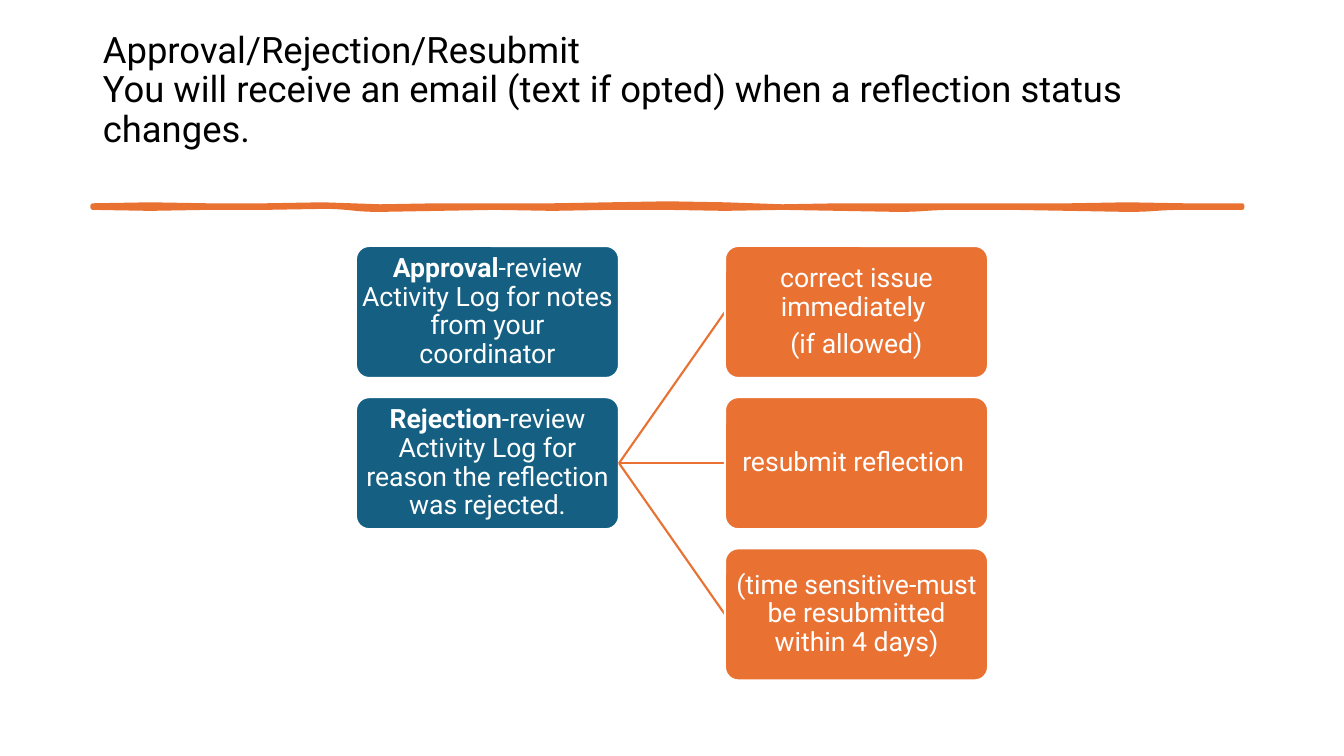
from lxml import etree
from pptx import Presentation
from pptx.dml.color import RGBColor
from pptx.enum.shapes import MSO_CONNECTOR, MSO_SHAPE
from pptx.enum.text import MSO_ANCHOR, MSO_AUTO_SIZE, PP_ALIGN
from pptx.oxml.ns import qn
from pptx.util import Inches, Pt

STRAIGHT = MSO_CONNECTOR.STRAIGHT
ROUNDED = MSO_SHAPE.ROUNDED_RECTANGLE
MIDDLE = MSO_ANCHOR.MIDDLE
LEFT, CENTER = PP_ALIGN.LEFT, PP_ALIGN.CENTER
NO_AUTOFIT = MSO_AUTO_SIZE.NONE
LEFT_SIDE, RIGHT_SIDE = 1, 3

FONT = "Roboto"
BLUE, ORANGE, WHITE, BLACK = "156082", "E97132", "FFFFFF", "000000"

HEADING = ("Approval/Rejection/Resubmit\v"
           "You will receive an email (text if opted) when a reflection status changes.")
OUTCOMES = [
    ("Approval", "-review Activity Log for notes from your coordinator"),
    ("Rejection", "-review Activity Log for reason the reflection was rejected."),
]
REJECTION_STEPS = [
    ["correct issue immediately ", "(if allowed)"],
    ["resubmit reflection "],
    ["(time sensitive-must be resubmitted within 4 days)"],
]

SLIDE_W, SLIDE_H = 13.33, 7.5
CARD_W, CARD_H = 2.61, 1.31
COLUMNS = (3.53, 7.19)
FIRST_ROW, ROW_PITCH = 2.44, 1.5

RULE_LEFT, RULE_WIDTH, RULE_TOP, RULE_THICK = 0.92, 11.4, 2.04, 0.02
UPPER_WAVE = [0, -1, 0, 0, -1, 1, 0, 0, 0, -1, -2, -1, 1, 0, 0, 0, 0, 0, -1, 0, 0]
LOWER_WAVE = [0, 1, 0, 0, -1, 2, 1, 0, 1, 0, 0, 1, 0, 1, 2, 0, 0, 1, 2, 0, 0]


def color(hex_code):
    return RGBColor.from_string(hex_code)


def style_font(font, size, hex_code):
    font.name = FONT
    font.size = Pt(size)
    font.color.rgb = color(hex_code)


def paint(shape, fill, outline, width):
    shape.shadow.inherit = False
    shape.fill.solid()
    shape.fill.fore_color.rgb = color(fill)
    shape.line.color.rgb = color(outline)
    shape.line.width = Pt(width)


def add_heading(slide):
    title = slide.shapes.title
    title.left, title.top = Inches(0.92), Inches(0.4)
    title.width, title.height = Inches(11.5), Inches(1.45)
    frame = title.text_frame
    frame.text = HEADING
    frame.word_wrap = True
    frame.auto_size = NO_AUTOFIT
    frame.vertical_anchor = MIDDLE
    frame.margin_bottom = Inches(0.49)
    paragraph = frame.paragraphs[0]
    paragraph.alignment = LEFT
    paragraph.line_spacing = 0.9
    for run in paragraph.runs:
        style_font(run.font, 26, BLACK)


def edge(offsets, level):
    step = RULE_WIDTH / (len(offsets) - 1)
    return [(Inches(RULE_LEFT + step * knot), Inches(level + offset / 100))
            for knot, offset in enumerate(offsets)]


def bend_segments(outline):
    start = outline.find(".//" + qn("a:moveTo"))[0]
    x, y = int(start.get("x")), int(start.get("y"))
    for segment in list(outline.iter(qn("a:lnTo"))):
        end_x, end_y = int(segment[0].get("x")), int(segment[0].get("y"))
        middle = (x + end_x) // 2
        curve = etree.Element(qn("a:cubicBezTo"))
        for point_x, point_y in ((middle, y), (middle, end_y), (end_x, end_y)):
            etree.SubElement(curve, qn("a:pt"), x=str(point_x), y=str(point_y))
        segment.getparent().replace(segment, curve)
        x, y = end_x, end_y


def add_rule(slide):
    upper = edge(UPPER_WAVE, RULE_TOP)
    lower = edge(LOWER_WAVE, RULE_TOP + RULE_THICK)
    builder = slide.shapes.build_freeform(*upper[0])
    builder.add_line_segments(upper[1:] + lower[::-1], close=True)
    rule = builder.convert_to_shape()
    bend_segments(rule._element)
    paint(rule, ORANGE, ORANGE, 3.25)
    etree.SubElement(rule._element.spPr.find(qn("a:ln")), qn("a:round"))


def add_card(slide, column, row, fill, lines):
    card = slide.shapes.add_shape(
        ROUNDED, Inches(COLUMNS[column]), Inches(FIRST_ROW + row * ROW_PITCH),
        Inches(CARD_W), Inches(CARD_H))
    card.adjustments[0] = 0.1
    paint(card, fill, WHITE, 1.5)
    frame = card.text_frame
    frame.text = "\n".join(lines)
    frame.word_wrap = True
    frame.vertical_anchor = MIDDLE
    frame.margin_left = frame.margin_right = Inches(0.01)
    frame.margin_top = frame.margin_bottom = Inches(0.01)
    for paragraph in frame.paragraphs:
        paragraph.alignment = CENTER
        paragraph.line_spacing = 0.9
        paragraph.space_after = Pt(6.5)
        for run in paragraph.runs:
            style_font(run.font, 19, WHITE)
    return card


def add_outcome(slide, row, keyword, advice):
    card = add_card(slide, 0, row, BLUE, [keyword])
    paragraph = card.text_frame.paragraphs[0]
    paragraph.runs[0].font.bold = True
    advice_run = paragraph.add_run()
    advice_run.text = advice
    style_font(advice_run.font, 19, WHITE)
    return card


def add_step(slide, row, lines, rejection):
    branch = slide.shapes.add_connector(STRAIGHT, 0, 0, 0, 0)
    branch.line.color.rgb = color(ORANGE)
    branch.line.width = Pt(1.5)
    etree.SubElement(branch._element.spPr, qn("a:effectLst"))
    step = add_card(slide, 1, row, ORANGE, lines)
    branch.begin_connect(rejection, RIGHT_SIDE)
    branch.end_connect(step, LEFT_SIDE)


def main():
    deck = Presentation()
    deck.slide_width, deck.slide_height = Inches(SLIDE_W), Inches(SLIDE_H)
    slide = deck.slides.add_slide(deck.slide_layouts[5])
    add_heading(slide)
    add_rule(slide)
    outcomes = [add_outcome(slide, row, *outcome) for row, outcome in enumerate(OUTCOMES)]
    for row, lines in enumerate(REJECTION_STEPS):
        add_step(slide, row, lines, outcomes[-1])
    deck.save("out.pptx")


if __name__ == "__main__":
    main()
